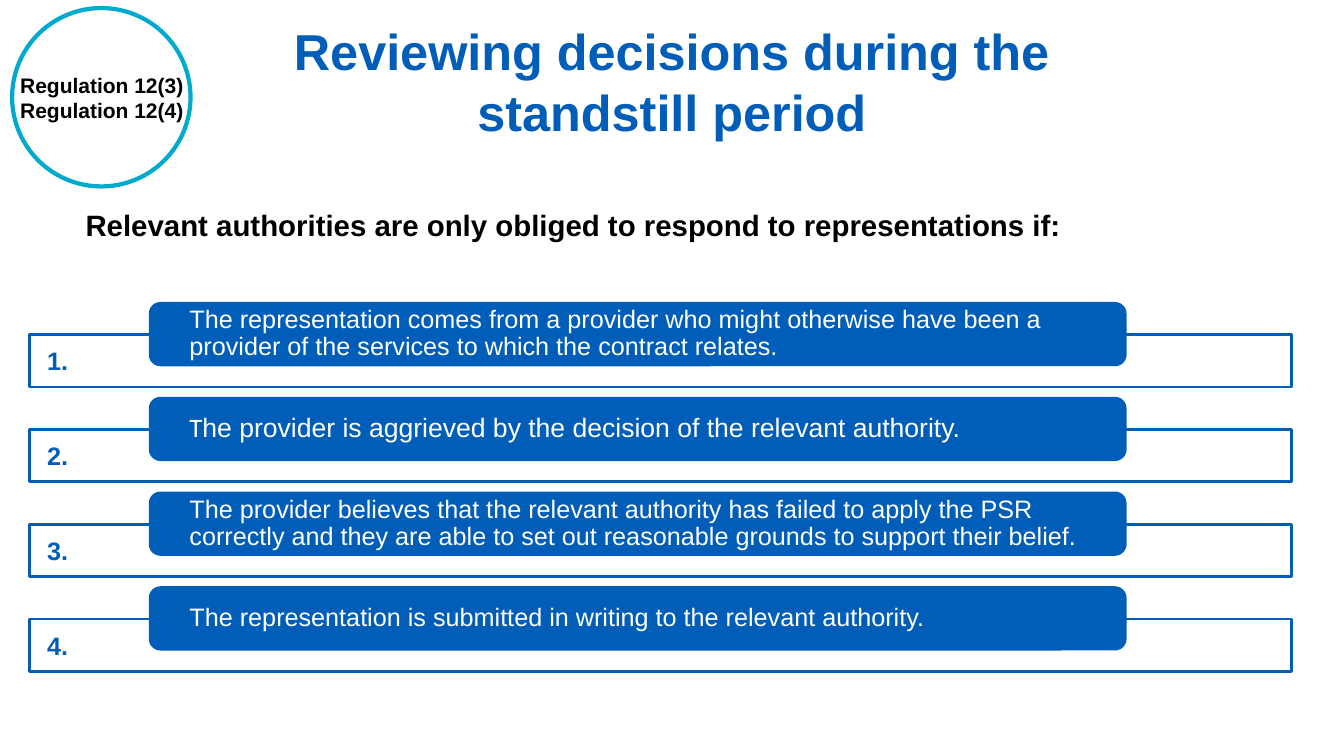
from lxml.etree import SubElement
from pptx import Presentation
from pptx.dml.color import RGBColor
from pptx.enum.shapes import MSO_SHAPE
from pptx.enum.text import MSO_ANCHOR, MSO_AUTO_SIZE, PP_ALIGN
from pptx.oxml.ns import qn
from pptx.util import Inches, Pt

COLORS = {"blue": "005EB8", "aqua": "00A9CE", "white": "FFFFFF", "black": "000000"}

CONDITIONS = [
    (18, [("The representation comes from a provider who might otherwise have been a "
           "provider of the services to which the contract relates.", "Arial")]),
    (19, [("T", "Calibri"),
          ("he provider is aggrieved by the decision of the relevant authority.", "Arial")]),
    (18, [("The provider believes that the relevant authority has failed to apply the PSR "
           "correctly and they are able to set out reasonable grounds to support their "
           "belief.", "Arial")]),
    (18, [("The representation is submitted in writing to the relevant authority.", "Arial")]),
]


def color(name):
    return RGBColor.from_string(COLORS[name])


def add_run(p, text, size, name, bold=False, font="Arial"):
    r = p.add_run()
    r.text = text
    r.font.size = Pt(size)
    r.font.name = font
    r.font.bold = bold
    r.font.color.rgb = color(name)


def add_shape(shapes, kind, box, fill, line, width):
    sp = shapes.add_shape(kind, *map(Inches, box))
    sp.shadow.inherit = False
    sp.fill.solid()
    sp.fill.fore_color.rgb = color(fill)
    sp.line.color.rgb = color(line)
    sp.line.width = Pt(width)
    return sp


def add_text(shapes, box, lines, size, name, align=PP_ALIGN.LEFT):
    tf = shapes.add_textbox(*map(Inches, box)).text_frame
    tf.word_wrap = True
    for i, line in enumerate(lines):
        p = tf.add_paragraph() if i else tf.paragraphs[0]
        p.alignment = align
        add_run(p, line, size, name, bold=True)


def add_title(s, x, y, w, h):
    title = s.shapes.title
    title.left, title.top, title.width, title.height = map(Inches, (x, y, w, h))
    tf = title.text_frame
    tf.word_wrap = True
    tf.auto_size = MSO_AUTO_SIZE.NONE
    tf.vertical_anchor = MSO_ANCHOR.MIDDLE
    p = tf.paragraphs[0]
    p.alignment = PP_ALIGN.CENTER
    add_run(p, "Reviewing decisions during the standstill period", 36, "blue", bold=True)


def add_regulation_badge(s, x, y, size):
    shapes = s.shapes.add_group_shape().shapes
    add_shape(shapes, MSO_SHAPE.OVAL, (x, y, size, size), "white", "aqua", 3)
    add_text(shapes, (x - 0.03, y + 0.59, size + 0.07, 0.61),
             ["Regulation 12(3)", "Regulation 12(4)"], 15, "black", PP_ALIGN.CENTER)


def add_condition(s, x, y, w, size, runs):
    bar = add_shape(s.shapes, MSO_SHAPE.RECTANGLE, (x, y + 0.31, w, 0.52), "white", "blue", 2)
    fill = bar.fill.fore_color._xFill.find(qn("a:srgbClr"))
    SubElement(fill, qn("a:alpha"), val="90000")

    pill = add_shape(s.shapes, MSO_SHAPE.ROUNDED_RECTANGLE,
                     (x + 1.2, y, w - 2.85, 0.61), "blue", "blue", 2)
    tf = pill.text_frame
    tf.word_wrap = True
    tf.vertical_anchor = MSO_ANCHOR.MIDDLE
    tf.margin_left = tf.margin_right = Inches(0.36)
    tf.margin_top = tf.margin_bottom = Inches(0.03)
    p = tf.paragraphs[0]
    p.alignment = PP_ALIGN.LEFT
    p.line_spacing = 0.9
    for text, font in runs:
        add_run(p, text, size, "white", font=font)


def add_conditions(s, x, y, w, pitch):
    for i, (size, runs) in enumerate(CONDITIONS):
        add_condition(s, x, y + i * pitch, w, size, runs)
    for i in range(len(CONDITIONS)):
        add_text(s.shapes, (x + 0.08, y + 0.37 + i * pitch, 0.47, 0.4),
                 [f"{i + 1}."], 18, "blue")


def main():
    prs = Presentation()
    prs.slide_width, prs.slide_height = Inches(13.33), Inches(7.5)
    s = prs.slides.add_slide(prs.slide_layouts[5])
    add_title(s, 1.9, 0.05, 9.53, 1.5)
    add_regulation_badge(s, 0.12, 0.08, 1.77)
    add_text(s.shapes, (0.75, 2.01, 11.83, 0.45),
             ["Relevant authorities are only obliged to respond to representations if:"],
             21, "black")
    add_conditions(s, 0.29, 3.01, 12.52, 0.94)
    prs.save("out.pptx")


if __name__ == "__main__":
    main()
